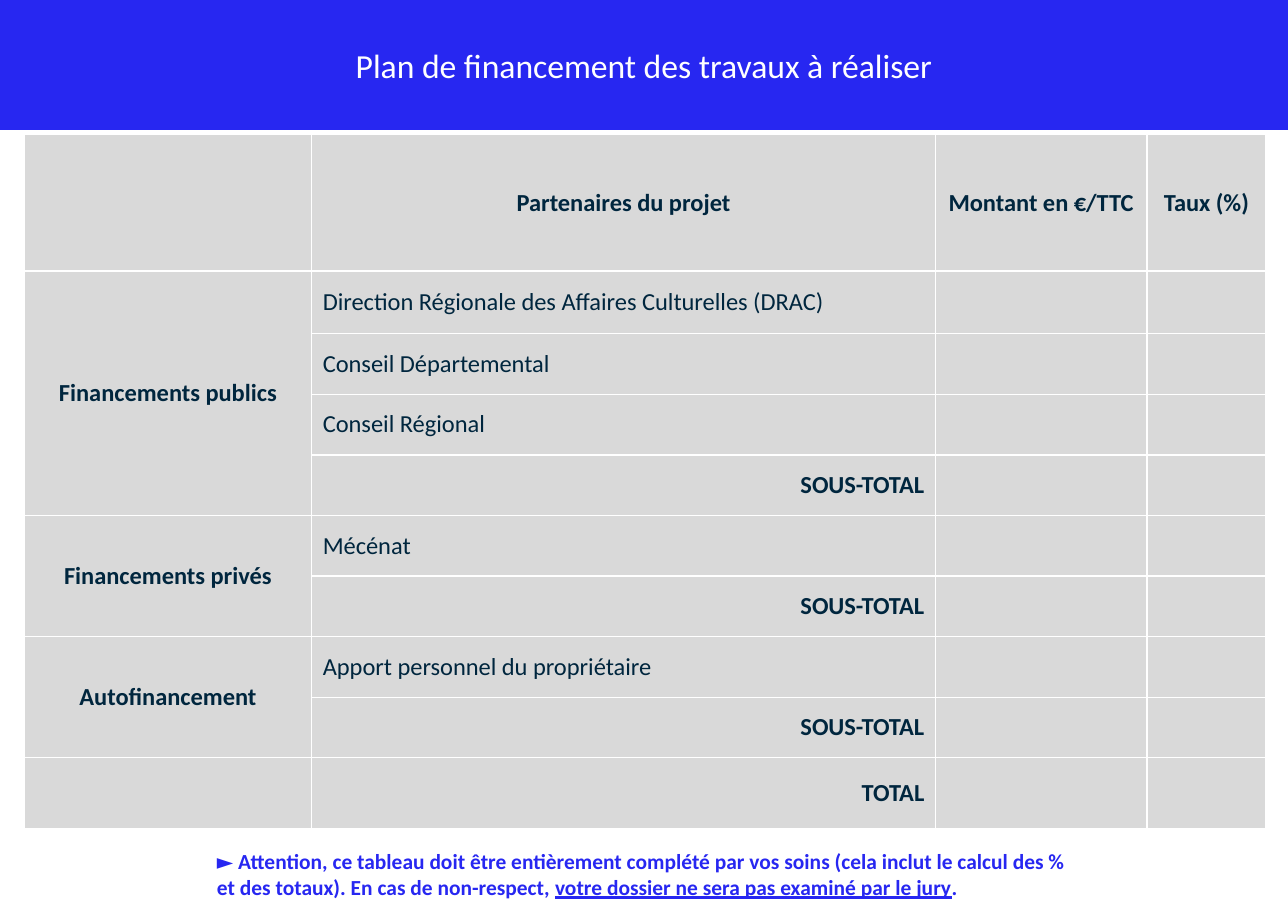
from lxml import etree
from pptx import Presentation
from pptx.dml.color import RGBColor
from pptx.enum.shapes import MSO_SHAPE
from pptx.enum.text import MSO_ANCHOR, PP_ALIGN
from pptx.oxml.ns import qn
from pptx.util import Inches, Pt

LEFT, CENTER, RIGHT = PP_ALIGN.LEFT, PP_ALIGN.CENTER, PP_ALIGN.RIGHT
MIDDLE, TOP = MSO_ANCHOR.MIDDLE, MSO_ANCHOR.TOP
RECTANGLE = MSO_SHAPE.RECTANGLE

# Content
TITLE = "Plan de financement des travaux à réaliser"
HEADERS = ["", "Partenaires du projet", "Montant en €/TTC", "Taux (%)"]
SUBTOTAL, TOTAL = "SOUS-TOTAL", "TOTAL"
GROUPS = [
    ("Financements publics", [
        "Direction Régionale des Affaires Culturelles (DRAC)",
        "Conseil Départemental",
        "Conseil Régional",
        SUBTOTAL,
    ]),
    ("Financements privés", ["Mécénat", SUBTOTAL]),
    ("Autofinancement", ["Apport personnel du propriétaire", SUBTOTAL]),
    ("", [TOTAL]),
]
NOTE = [
    ("► Attention, ce tableau doit être entièrement complété par vos soins "
     "(cela inclut le calcul des % et des totaux). En cas de non-respect, ", False),
    ("votre dossier ne sera pas examiné par le jury", True),
    (".", False),
]

# Look and measures, in inches
FONT = "Calibri"
BLUE, NAVY, GREY, WHITE = "2727F1", "00263E", "D9D9D9", "FFFFFF"
PAGE_WIDTH, PAGE_HEIGHT = 11.69, 8.27
BANNER_HEIGHT = 1.18
TABLE_LEFT, TABLE_TOP = 0.22, 1.22
COLUMNS = [2.61, 5.66, 1.92, 1.08]
ROWS = [1.24, 0.57] + [0.55] * 7 + [0.64]
NOTE_AREA = (1.87, 7.65, 7.95, 0.57)
BORDER = 0.96


def color(value):
    return RGBColor.from_string(value)


def paint(target, value):
    target.fill.solid()
    target.fill.fore_color.rgb = color(value)


def write(frame, spans, size, ink, align=LEFT, bold=False, before=0):
    """Fill the first paragraph with (text, underlined) spans."""
    frame.word_wrap = True
    para = frame.paragraphs[0]
    para.alignment = align
    para.space_before = Pt(before)
    for text, underlined in spans:
        span = para.add_run()
        span.text = text
        span.font.name = FONT
        span.font.size = Pt(size)
        span.font.bold = bold
        span.font.underline = underlined
        span.font.color.rgb = color(ink)


def add_borders(cell):
    properties = cell._tc.get_or_add_tcPr()
    for position, side in enumerate(("lnL", "lnR", "lnT", "lnB")):
        line = etree.Element(qn(f"a:{side}"), w=str(int(Pt(BORDER))))
        fill = etree.SubElement(line, qn("a:solidFill"))
        etree.SubElement(fill, qn("a:srgbClr"), val=WHITE)
        properties.insert(position, line)


def write_cell(cell, text, align=CENTER, bold=True, before=2.6):
    cell.vertical_anchor = MIDDLE
    if text:
        write(cell.text_frame, [(text, False)], 16, NAVY, align, bold, before)


def add_funding_table(page):
    table = page.shapes.add_table(
        len(ROWS), len(COLUMNS), Inches(TABLE_LEFT), Inches(TABLE_TOP),
        Inches(sum(COLUMNS)), Inches(sum(ROWS))).table
    for column, width in zip(table.columns, COLUMNS):
        column.width = Inches(width)
    for row, height in zip(table.rows, ROWS):
        row.height = Inches(height)
    for cell in table.iter_cells():
        paint(cell, GREY)
        add_borders(cell)

    for column, header in enumerate(HEADERS):
        write_cell(table.cell(0, column), header)

    # Each group spans the rows of its partners
    first = 1
    for group, partners in GROUPS:
        group_cell = table.cell(first, 0)
        if len(partners) > 1:
            group_cell.merge(table.cell(first + len(partners) - 1, 0))
        write_cell(group_cell, group)
        for row, partner in enumerate(partners, first):
            if partner in (SUBTOTAL, TOTAL):
                write_cell(table.cell(row, 1), partner, RIGHT, before=2.8)
            else:
                write_cell(table.cell(row, 1), partner, LEFT, False, 2.4)
        first += len(partners)


def add_banner(page):
    banner = page.shapes.add_shape(
        RECTANGLE, 0, 0, Inches(PAGE_WIDTH), Inches(BANNER_HEIGHT))
    banner.shadow.inherit = False
    banner.line.fill.background()
    paint(banner, BLUE)
    banner.text_frame.vertical_anchor = MIDDLE
    write(banner.text_frame, [(TITLE, False)], 22, WHITE, CENTER)


def add_note(page):
    box = page.shapes.add_textbox(*map(Inches, NOTE_AREA))
    box.text_frame.vertical_anchor = TOP
    write(box.text_frame, NOTE, 14, BLUE, bold=True)


def main():
    deck = Presentation()
    deck.slide_width, deck.slide_height = Inches(PAGE_WIDTH), Inches(PAGE_HEIGHT)
    page = deck.slides.add_slide(deck.slide_layouts[6])
    add_funding_table(page)
    add_banner(page)
    add_note(page)
    deck.save("out.pptx")


if __name__ == "__main__":
    main()
